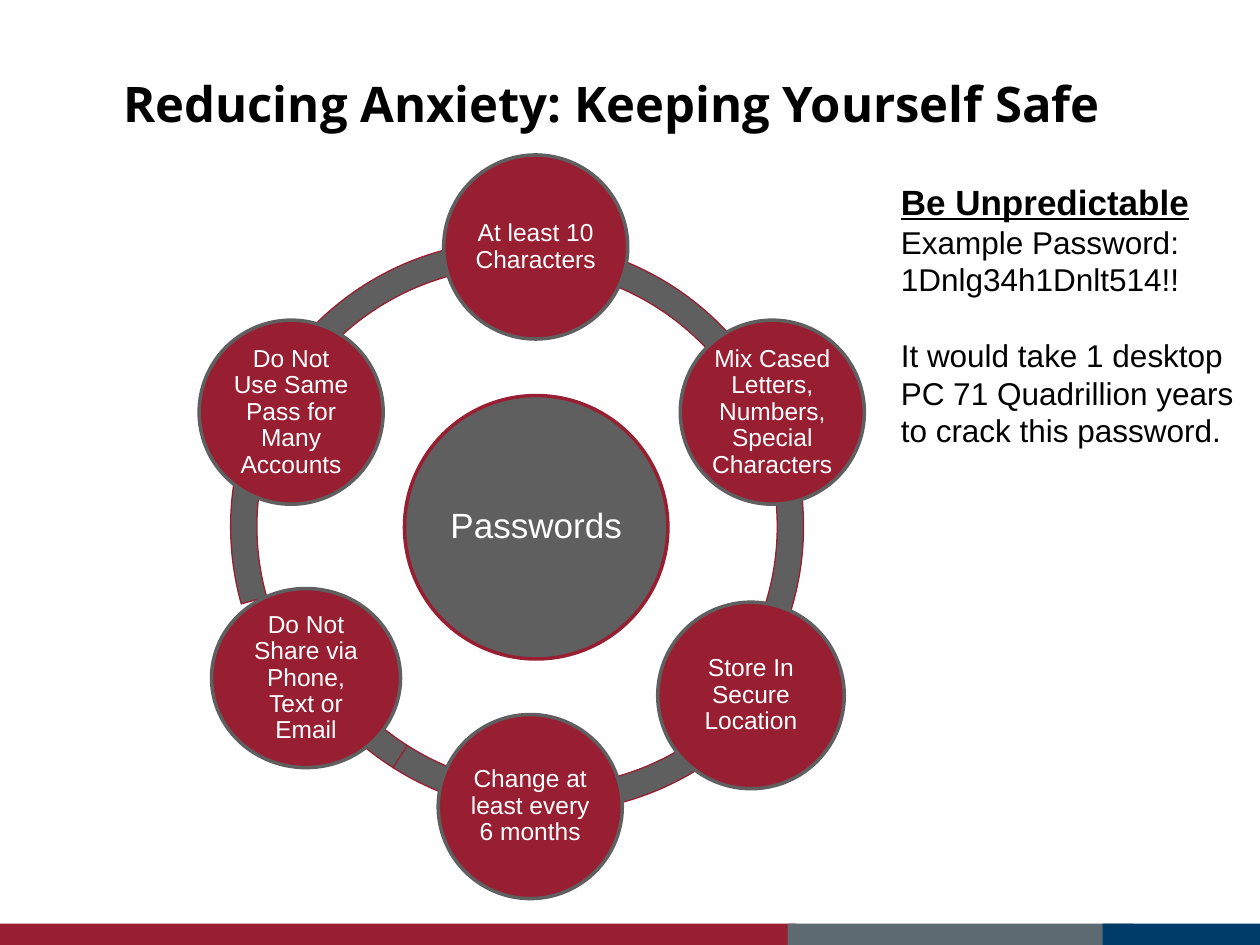
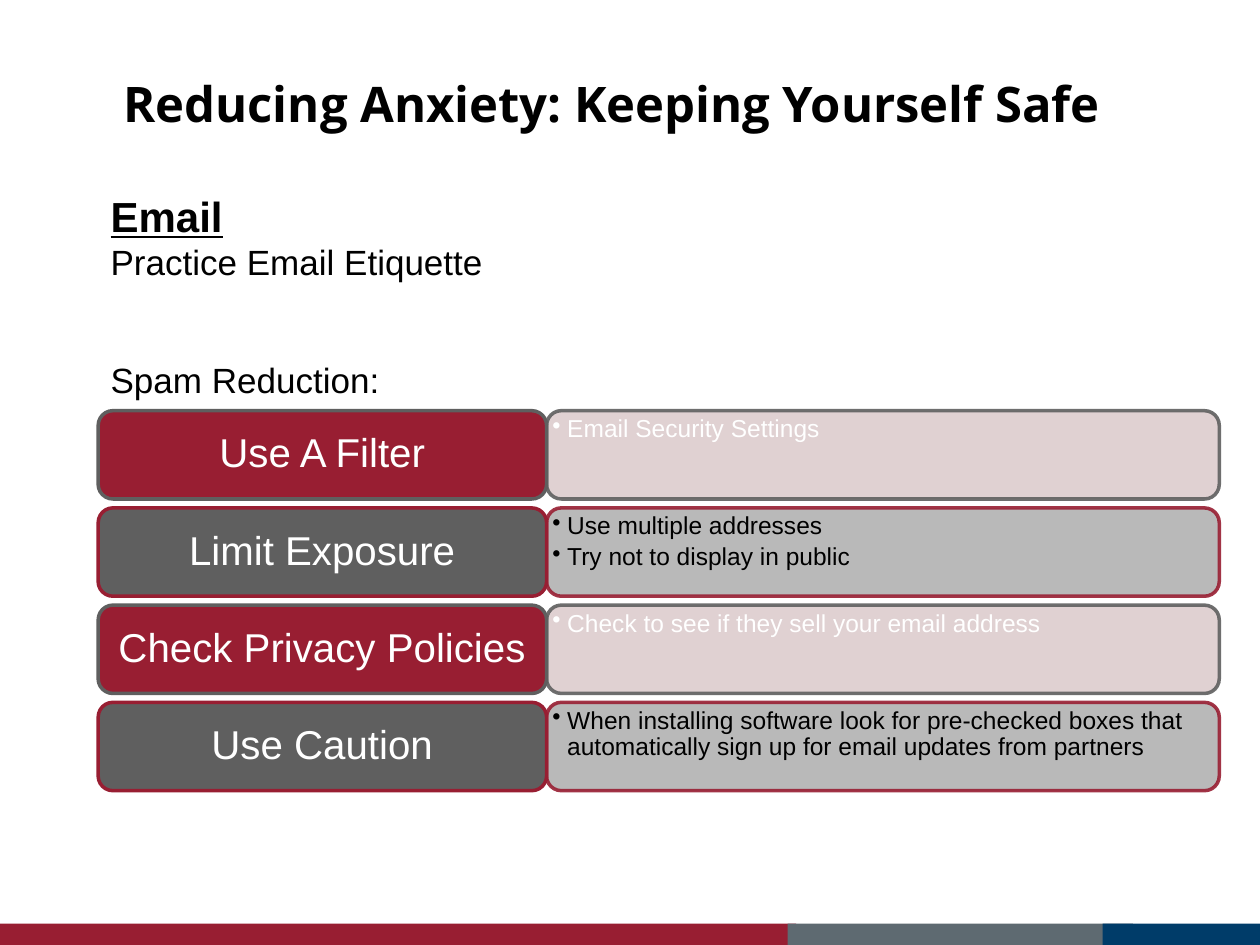
import pptx
import pptx.dml.color
import pptx.enum.shapes
import pptx.enum.text
import pptx.oxml
import pptx.oxml.ns
import pptx.util

Cm, Pt = pptx.util.Cm, pptx.util.Pt
SHAPE = pptx.enum.shapes.MSO_SHAPE
ALIGN = pptx.enum.text.PP_ALIGN
ANCHOR = pptx.enum.text.MSO_ANCHOR

CRIMSON, GRAY, SLATE, NAVY = "981E32", "5F5F5F", "5E6A71", "003C69"
PINK, SILVER = "DDCDCE", "B2B2B2"
BLACK, WHITE = "000000", "FFFFFF"

TITLE = "Reducing Anxiety: Keeping Yourself Safe"
FOOTER_BANDS = [(0, 16.05, CRIMSON), (15.88, 6.96, SLATE), (22.23, 3.17, NAVY)]

RING_TOP, RING_SIZE = 4.85, 11.53
# left, start angle, end angle
RING_ARCS = [
    (5.26, 122.44, 160.67),
    (5.26, 55.9, 122.53),
    (4.67, 201.49, 52.36),
    (4.65, 164.3, 201.61),
]
# centre x, centre y, width, height, side margin, advice
PASSWORD_TIPS = [
    (10.8, 4.98, 3.71, 3.71, 0.05, "At least 10 Characters"),
    (15.57, 8.31, 3.71, 3.71, 0.05, "Mix Cased Letters, Numbers, Special Characters"),
    (10.69, 16.26, 3.71, 3.71, 0.05, "Change at least every 6 months"),
    (5.87, 8.31, 3.71, 3.71, 0.05, "Do Not Use Same Pass for Many Accounts"),
    (15.14, 14.02, 3.76, 3.76, 0.03, "Store In Secure Location"),
    (6.17, 13.67, 3.81, 3.61, 0.26, "Do Not Share via Phone, Text or Email"),
]

ROW_TOP, ROW_PITCH, ROW_HEIGHT = 8.28, 1.96, 1.78
HEADING_LEFT, HEADING_WIDTH, DETAIL_WIDTH = 1.98, 9.04, 13.56
SPAM_RULES = [
    ("Use A Filter", ["Email Security Settings"]),
    ("Limit Exposure", ["Use multiple addresses", "Try not to display in public"]),
    ("Check Privacy Policies", ["Check to see if they sell your email address"]),
    ("Use Caution", ["When installing software look for pre-checked boxes that "
                     "automatically sign up for email updates from partners"]),
]


def rgb(hex_colour):
    return pptx.dml.color.RGBColor.from_string(hex_colour)


def apply(target, values):
    for name, value in values.items():
        setattr(target, name, value)


def set_alpha(colour_format, percent):
    """Make a solid fill partly transparent."""
    colour = colour_format._xPr.find(".//" + pptx.oxml.ns.qn("a:srgbClr"))
    colour.append(pptx.oxml.parse_xml(
        f'<a:alpha {pptx.oxml.ns.nsdecls("a")} val="{percent * 1000}"/>'))


def add_bullet(paragraph):
    properties = paragraph._p.get_or_add_pPr()
    apply_indent = {"marL": Cm(0.3), "indent": -Cm(0.3)}
    for name, value in apply_indent.items():
        properties.set(name, str(value))
    properties.append(pptx.oxml.parse_xml(
        f'<a:buChar {pptx.oxml.ns.nsdecls("a")} char="•"/>'))


def write(frame, lines, margins=(0.25, 0.13), anchor=ANCHOR.TOP, bullets=False):
    """Fill a frame with (text, font values, colour, paragraph values) lines."""
    side, edge = map(Cm, margins)
    apply(frame, {"word_wrap": True, "vertical_anchor": anchor,
                  "margin_left": side, "margin_right": side,
                  "margin_top": edge, "margin_bottom": edge})
    for index, (text, font, colour, layout) in enumerate(lines):
        paragraph = frame.add_paragraph() if index else frame.paragraphs[0]
        apply(paragraph, {"alignment": ALIGN.LEFT, **layout})
        run = paragraph.add_run()
        run.text = text
        apply(run.font, {"name": "Arial", **font})
        run.font.color.rgb = rgb(colour)
        if bullets:
            add_bullet(paragraph)


def add_text(slide, left, top, width, height, lines, **options):
    box = slide.shapes.add_textbox(Cm(left), Cm(top), Cm(width), Cm(height))
    write(box.text_frame, lines, **options)


def add_figure(slide, kind, left, top, width, height, fill, line=None, weight=2, opacity=100):
    figure = slide.shapes.add_shape(kind, Cm(left), Cm(top), Cm(width), Cm(height))
    figure.shadow.inherit = False
    figure.fill.solid()
    figure.fill.fore_color.rgb = rgb(fill)
    if line is None:
        figure.line.fill.background()
    else:
        figure.line.color.rgb = rgb(line)
        figure.line.width = Pt(weight)
    if opacity < 100:
        set_alpha(figure.fill, opacity)
        set_alpha(figure.line.fill, opacity)
    return figure


def label(figure, text, size, margins):
    write(figure.text_frame,
          [(text, {"size": Pt(size)}, WHITE, {"alignment": ALIGN.CENTER, "line_spacing": 0.9})],
          margins=margins, anchor=ANCHOR.MIDDLE)


def add_circle(slide, x, y, width, height, fill, line, text, size, margins):
    """Add a labelled ellipse around a centre point."""
    circle = add_figure(slide, SHAPE.OVAL, x - width / 2, y - height / 2,
                        width, height, fill, line)
    label(circle, text, size, margins)


def add_arc(slide, left, start, end):
    arc = add_figure(slide, SHAPE.BLOCK_ARC, left, RING_TOP, RING_SIZE, RING_SIZE,
                     GRAY, CRIMSON, weight=0.75)
    # Angles are stored in 60000ths of a degree, adjustments in 100000ths.
    for index, value in enumerate((start * 0.6, end * 0.6, 0.046)):
        arc.adjustments[index] = value


def add_rule_row(slide, index, heading, details):
    top = ROW_TOP + index * ROW_PITCH
    if index % 2:
        fill, line, tint, ink = GRAY, CRIMSON, SILVER, BLACK
    else:
        fill, line, tint, ink = CRIMSON, GRAY, PINK, WHITE
    detail_panel = add_figure(slide, SHAPE.ROUNDED_RECTANGLE, HEADING_LEFT + HEADING_WIDTH, top,
                              DETAIL_WIDTH, ROW_HEIGHT, tint, line, opacity=90)
    layout = {"line_spacing": 0.9, "space_after": Pt(2.5)}
    write(detail_panel.text_frame,
          [(detail, {"size": Pt(14)}, ink, layout) for detail in details],
          margins=(0.03, 0.03), bullets=True)
    heading_panel = add_figure(slide, SHAPE.ROUNDED_RECTANGLE, HEADING_LEFT, top,
                               HEADING_WIDTH, ROW_HEIGHT, fill, line)
    label(heading_panel, heading, 23, (0.25, 0.13))


def add_base_slide(deck):
    """Add a blank slide with the shared footer bands and title."""
    slide = deck.slides.add_slide(deck.slide_layouts[6])
    for left, width, colour in FOOTER_BANDS:
        add_figure(slide, SHAPE.RECTANGLE, left, 18.62, width, 0.43, colour)
    title_font = {"name": "Open Sans", "size": Pt(28), "bold": True}
    add_text(slide, 2.24, 1.47, 21.59, 1.35,
             [(TITLE, title_font, BLACK, {"line_spacing": 0.9})], anchor=ANCHOR.BOTTOM)
    return slide


def heading_line(text, size):
    return text, {"size": Pt(size), "bold": True, "underline": True}, BLACK, {}


def body_line(text, size, gap=0):
    return text, {"size": Pt(size)}, BLACK, {"space_before": Pt(gap)}


def build_passwords(deck):
    slide = add_base_slide(deck)
    for arc in RING_ARCS:
        add_arc(slide, *arc)
    add_circle(slide, 10.81, 10.63, 5.31, 5.31, GRAY, CRIMSON, "Passwords", 20, (0.08, 0.08))
    for x, y, width, height, margin, advice in PASSWORD_TIPS:
        add_circle(slide, x, y, width, height, CRIMSON, GRAY, advice, 14, (margin, 0.03))
    add_text(slide, 17.91, 3.51, 7.49, 5.74, [
        heading_line("Be Unpredictable", 20),
        body_line("Example Password:", 18),
        body_line("1Dnlg34h1Dnlt514!!", 18),
        body_line("It would take 1 desktop PC 71 Quadrillion years to crack this password.",
                  18, gap=21.5),
    ])


def build_email(deck):
    slide = add_base_slide(deck)
    add_text(slide, 1.98, 3.71, 22.07, 9.14, [
        heading_line("Email", 24),
        body_line("Practice Email Etiquette", 20),
        body_line("Spam Reduction:", 20, gap=43),
    ])
    for index, (heading, details) in enumerate(SPAM_RULES):
        add_rule_row(slide, index, heading, details)


def main():
    deck = pptx.Presentation()
    apply(deck, {"slide_width": Cm(25.4), "slide_height": Cm(19.05)})
    build_passwords(deck)
    build_email(deck)
    deck.save("out.pptx")


if __name__ == "__main__":
    main()
